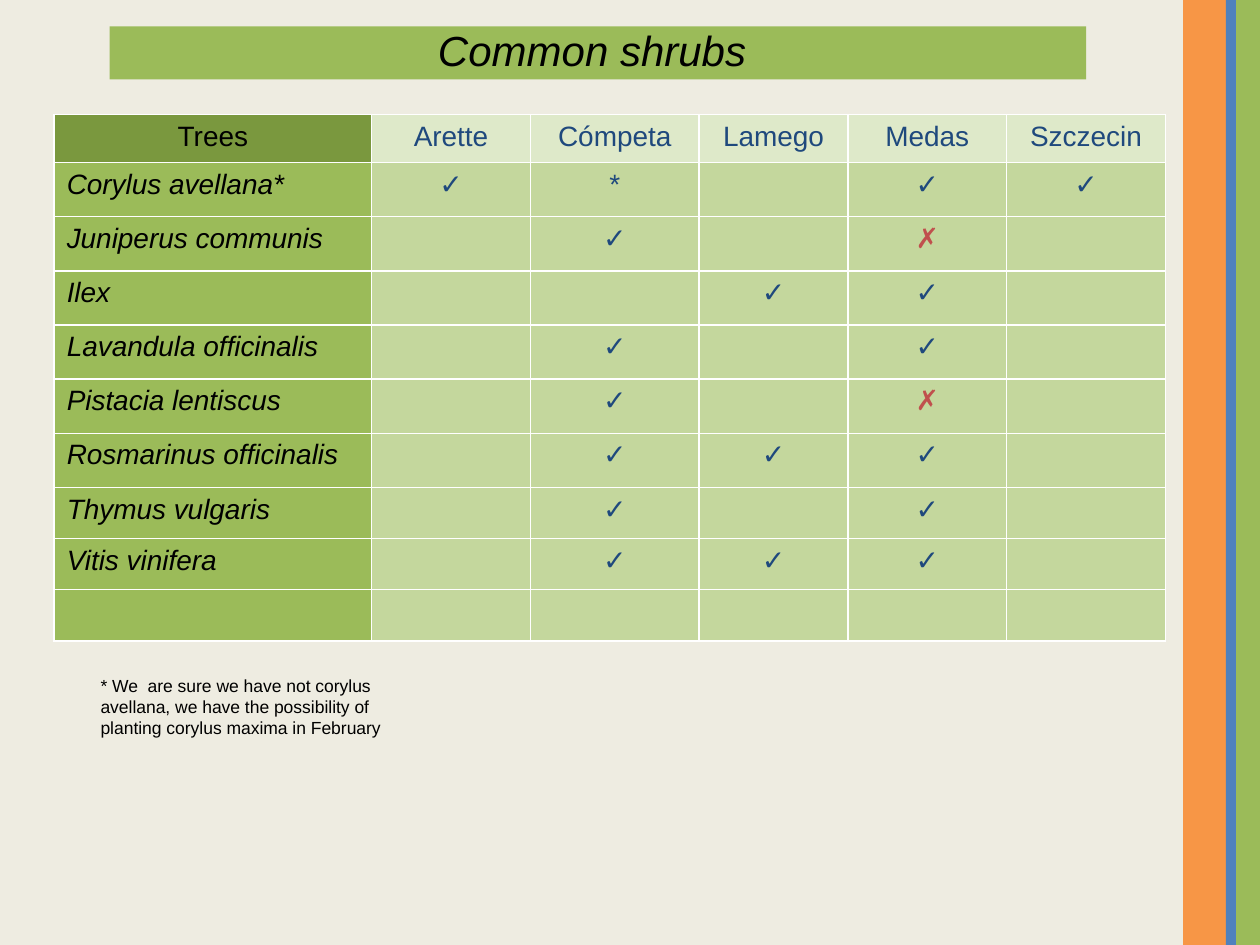
"""Build the slide of common shrubs found at each school site."""
from lxml.etree import SubElement
from pptx import Presentation
from pptx.dml.color import RGBColor
from pptx.enum.shapes import MSO_SHAPE as Shape
from pptx.enum.text import MSO_ANCHOR as Anchor, MSO_AUTO_SIZE as Fit, PP_ALIGN as Align
from pptx.oxml.ns import qn
from pptx.util import Inches, Pt

CREAM = RGBColor(0xEE, 0xEC, 0xE1)
ORANGE = RGBColor(0xF7, 0x96, 0x46)
BLUE = RGBColor(0x4F, 0x81, 0xBD)
GREEN = RGBColor(0x9B, 0xBB, 0x59)
DARK = RGBColor(0x7A, 0x98, 0x3E)
PALE = RGBColor(0xDE, 0xE9, 0xC9)
LIGHT = RGBColor(0xC4, 0xD7, 0x9D)
NAVY = RGBColor(0x1F, 0x49, 0x7D)
RED = RGBColor(0xC0, 0x50, 0x4D)
BLACK = RGBColor(0, 0, 0)
WHITE = RGBColor(0xFF, 0xFF, 0xFF)

TITLE = "Common shrubs "
NOTE = ("* We  are sure we have not corylus avellana, we have the possibility "
        "of planting corylus maxima in February")
HEAD = ["Trees", "Arette", "Cómpeta", "Lamego", "Medas", "Szczecin"]
ROWS = [
    ["Corylus avellana*", "✓", "*", "", "✓", "✓"],
    ["Juniperus communis", "", "✓", "", "✗", ""],
    ["Ilex", "", "", "✓", "✓", ""],
    ["Lavandula officinalis", "", "✓", "", "✓", ""],
    ["Pistacia lentiscus", "", "✓", "", "✗", ""],
    ["Rosmarinus officinalis", "", "✓", "✓", "✓", ""],
    ["Thymus vulgaris", "", "✓", "", "✓", ""],
    ["Vitis vinifera", "", "✓", "✓", "✓", ""],
    [""] * 6,
]
WIDTHS = [2.52, 1.26, 1.34, 1.18, 1.26, 1.26]
HEIGHTS = [0.38] + [0.43] * 6 + [0.4] * 3
BARS = [(9.39, 0.35, ORANGE), (9.81, 0.19, GREEN), (9.73, 0.08, BLUE)]


def write(frame, text, size=16, color=BLACK, italic=False, align=Align.LEFT, lines=None):
    """Put one formatted paragraph in a text frame."""
    para = frame.paragraphs[0]
    para.alignment = align
    para.line_spacing = lines
    run = para.add_run()
    run.text = text
    font = run.font
    font.name, font.size, font.italic = "Arial", Pt(size), italic
    font.color.rgb = color


def paint(item, color):
    """Give a shape, cell or background a solid fill."""
    item.fill.solid()
    item.fill.fore_color.rgb = color


def edge(cell):
    """Draw thin white borders round a cell."""
    props = cell._tc.get_or_add_tcPr()
    for side in ("lnL", "lnR", "lnT", "lnB"):
        line = SubElement(props, qn(f"a:{side}"), w=str(Pt(1)))
        fill = SubElement(line, qn("a:solidFill"))
        SubElement(fill, qn("a:srgbClr"), val=str(WHITE))


def add_bars(slide):
    """Add the vertical bars on the right."""
    for left, width, color in BARS:
        bar = slide.shapes.add_shape(
            Shape.RECTANGLE, Inches(left), 0, Inches(width), Inches(7.5))
        bar.shadow.inherit = False
        bar.line.fill.background()
        paint(bar, color)


def add_grid(slide):
    """Add the table of shrubs by site."""
    grid = slide.shapes.add_table(
        len(HEIGHTS), len(WIDTHS), Inches(0.43), Inches(0.91),
        Inches(sum(WIDTHS)), Inches(sum(HEIGHTS))).table
    for col, width in zip(grid.columns, WIDTHS):
        col.width = Inches(width)
    for row, height in zip(grid.rows, HEIGHTS):
        row.height = Inches(height)
    for r, row in enumerate([HEAD] + ROWS):
        for c, text in enumerate(row):
            cell = grid.cell(r, c)
            edge(cell)
            top, name = r == 0, c == 0
            paint(cell, (DARK if name else PALE) if top else (GREEN if name else LIGHT))
            if text:
                write(cell.text_frame, text,
                      color=BLACK if name else RED if text == "✗" else NAVY,
                      italic=name and not top,
                      align=Align.LEFT if name and not top else Align.CENTER)


def add_title(slide):
    """Place and fill the title."""
    title = slide.shapes.title
    title.left, title.top = Inches(0.87), Inches(0.21)
    title.width, title.height = Inches(7.75), Inches(0.42)
    paint(title, GREEN)
    frame = title.text_frame
    frame.auto_size, frame.vertical_anchor = Fit.NONE, Anchor.MIDDLE
    write(frame, TITLE, size=24, italic=True, align=Align.CENTER, lines=0.9)


def add_note(slide):
    """Add the footnote under the table."""
    box = slide.shapes.add_textbox(Inches(0.7), Inches(5.31), Inches(2.5), Inches(0.61))
    box.text_frame.word_wrap = True
    box.text_frame.auto_size = Fit.SHAPE_TO_FIT_TEXT
    write(box.text_frame, NOTE, size=10)


def main():
    """Build and save the deck."""
    deck = Presentation()
    deck.slide_width, deck.slide_height = Inches(10), Inches(7.5)
    slide = deck.slides.add_slide(deck.slide_layouts[5])
    paint(slide.background, CREAM)
    for add in (add_bars, add_grid, add_title, add_note):
        add(slide)
    deck.save("out.pptx")


if __name__ == "__main__":
    main()
